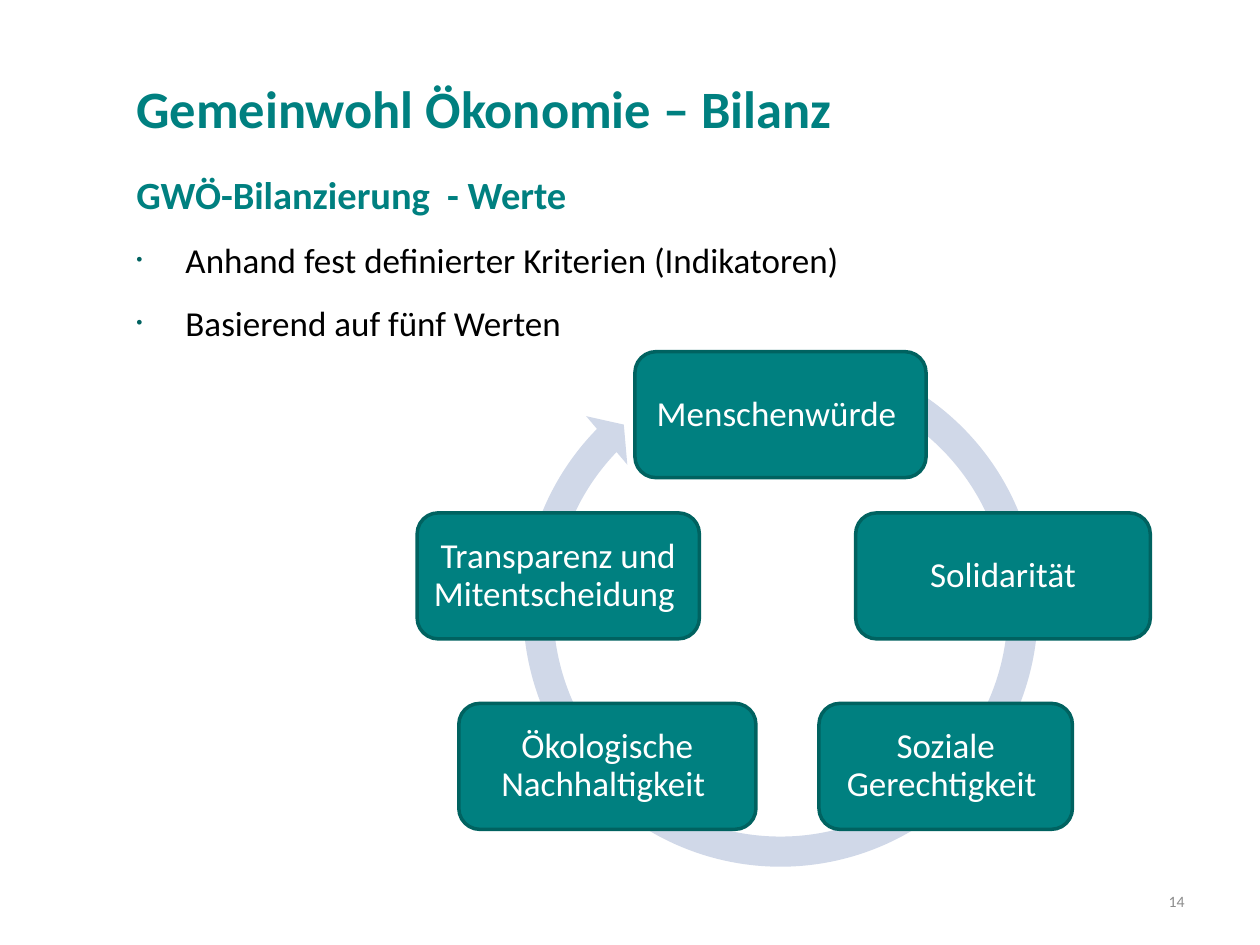
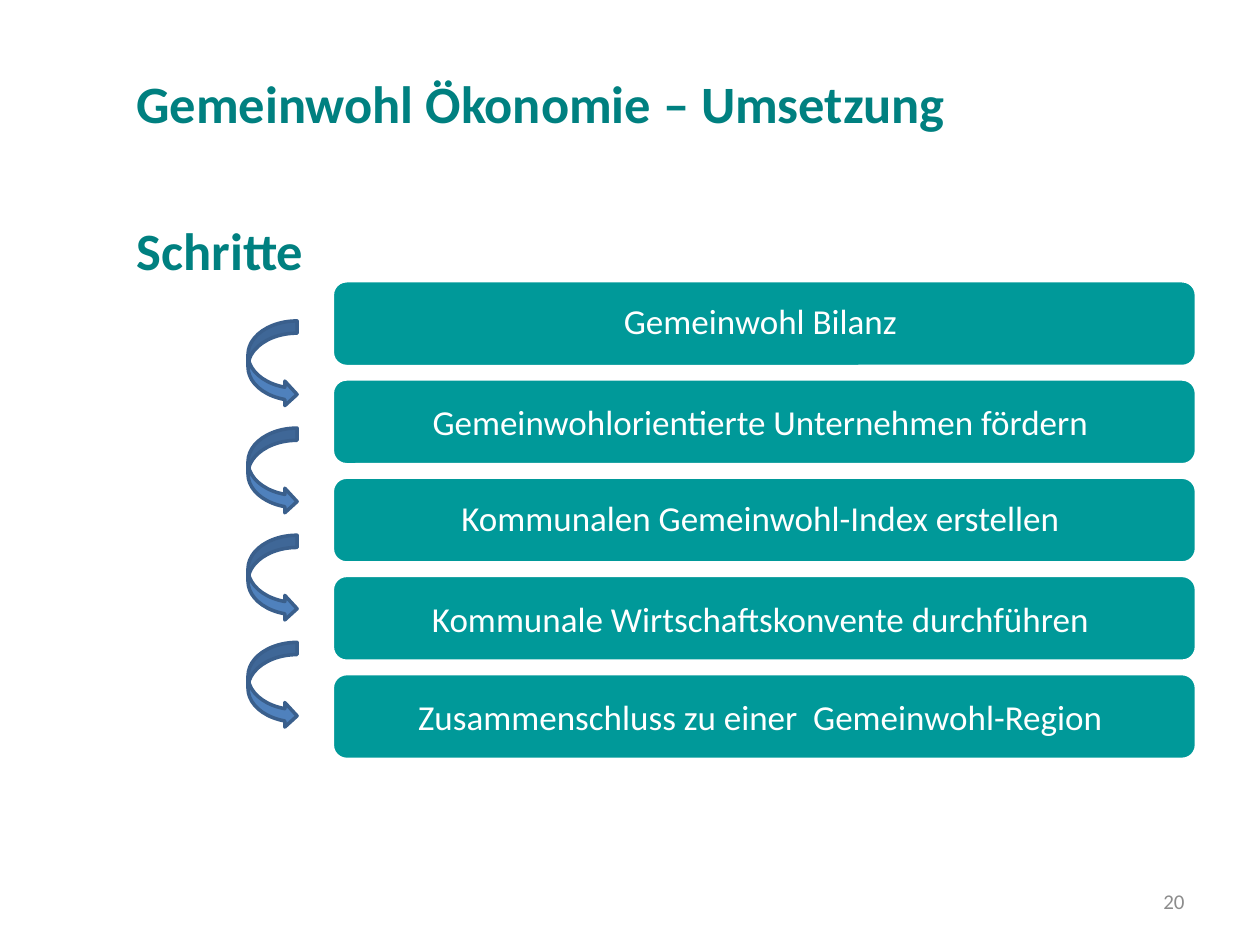
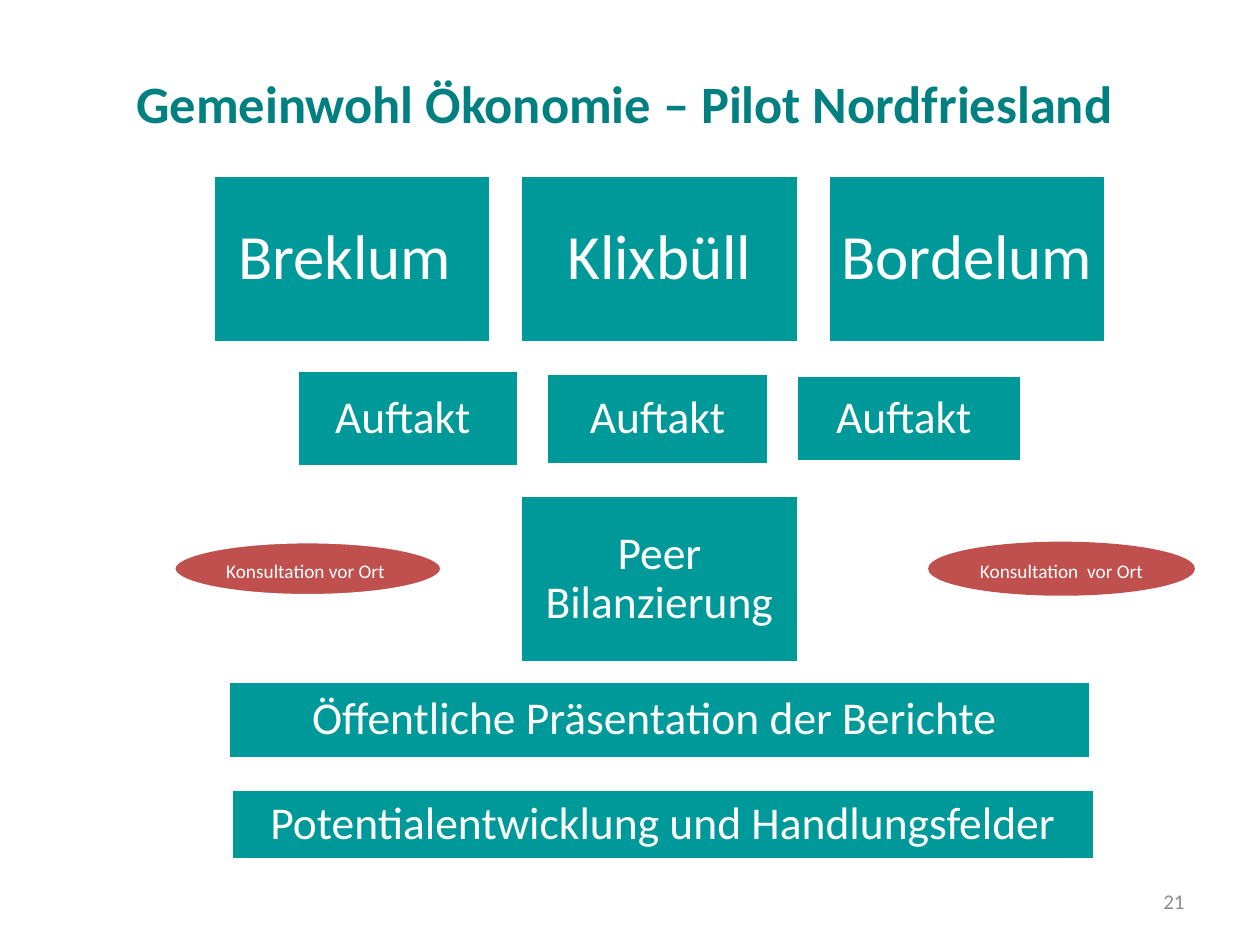
from lxml.etree import SubElement
from pptx import Presentation
from pptx.dml.color import RGBColor
from pptx.enum.shapes import MSO_SHAPE as Preset
from pptx.enum.text import MSO_ANCHOR as Anchor, PP_ALIGN as Align
from pptx.oxml.ns import qn
from pptx.util import Cm, Pt

FONT = "Calibri"
COLORS = {
    "heading": "008080",
    "edge": "006260",
    "box": "009999",
    "ring": "D0D8E8",
    "arrow": "4F81BD",
    "arrow_edge": "3A5F8C",
    "site": "C0504D",
    "white": "FFFFFF",
    "black": "000000",
    "number": "8C8C8C",
}


def rgb(name):
    return RGBColor.from_string(COLORS[name])


def style_run(run, size, color, bold=False):
    run.font.name = FONT
    run.font.size = Pt(size)
    run.font.bold = bold
    run.font.color.rgb = rgb(color)


def add_text(slide, box, text, size, color, bold=False, align=Align.LEFT, anchor=Anchor.MIDDLE):
    frame = slide.shapes.add_textbox(*map(Cm, box)).text_frame
    frame.word_wrap = True
    frame.vertical_anchor = anchor
    frame.text = text
    heading = frame.paragraphs[0]
    heading.alignment = align
    style_run(heading.runs[0], size, color, bold)
    return frame


def add_figure(slide, preset, box, fill, edge=None):
    figure = slide.shapes.add_shape(preset, *map(Cm, box))
    figure.shadow.inherit = False
    figure.fill.solid()
    figure.fill.fore_color.rgb = rgb(fill)
    if edge:
        figure.line.color.rgb = rgb(edge)
        figure.line.width = Pt(2)
    else:
        figure.line.fill.background()
    return figure


def add_label(figure, text, size, inset, spacing=0.9):
    frame = figure.text_frame
    frame.word_wrap = True
    frame.vertical_anchor = Anchor.MIDDLE
    frame.margin_left = frame.margin_right = Cm(inset)
    frame.margin_top = frame.margin_bottom = Cm(inset)
    frame.text = text
    label = frame.paragraphs[0]
    label.alignment = Align.CENTER
    label.line_spacing = spacing
    style_run(label.runs[0], size, "white")


def add_page(deck, topic, number, title_top=0.48, number_size=12):
    slide = deck.slides.add_slide(deck.slide_layouts[6])
    title = f"Gemeinwohl Ökonomie – {topic}"
    add_text(slide, (2.5, title_top, 23.22, 3.18), title, 30, "heading", True)
    add_text(slide, (18.21, 17.65, 5.92, 1.02), number, number_size, "number", align=Align.RIGHT)
    return slide


def add_bullet(paragraph):
    props = paragraph._p.get_or_add_pPr()
    props.set("marL", str(Cm(0.99)))
    props.set("indent", str(Cm(-0.99)))
    tint = SubElement(props, qn("a:buClr"))
    SubElement(tint, qn("a:srgbClr")).set("val", COLORS["edge"])
    SubElement(props, qn("a:buSzPct")).set("val", "50000")
    SubElement(props, qn("a:buFont")).set("typeface", "Arial")
    SubElement(props, qn("a:buChar")).set("char", "•")


def criteria(slide, box, heading, points):
    frame = add_text(slide, box, heading, 22, "heading", True, anchor=Anchor.TOP)
    for point in points:
        paragraph = frame.add_paragraph()
        paragraph.text = point
        add_bullet(paragraph)
        paragraph.space_before = Pt(12)
        style_run(paragraph.runs[0], 20, "black")


def value_ring(slide, left, top, values):
    ring = add_figure(slide, Preset.CIRCULAR_ARROW, (left + 1.8, top, 11.05, 11.05), "ring")
    thickness, head_angle, end_angle, start_angle, head_width = 5.5, 5.51, 224.19, 293.11, 5.8
    ring.adjustments[0] = thickness / 100
    for index, degrees in enumerate((head_angle, end_angle, start_angle), 1):
        ring.adjustments[index] = degrees * 0.6
    ring.adjustments[4] = head_width / 100
    for name, x, y, width in values:
        node = add_figure(slide, Preset.ROUNDED_RECTANGLE,
                          (left + x, top + y, width, 2.54), "heading", "edge")
        add_label(node, name, 20, 0.2)


def step_list(slide, left, top, steps):
    for row, (step, spacing) in enumerate(steps):
        bar = add_figure(slide, Preset.ROUNDED_RECTANGLE,
                         (left + 1.7, top + row * 1.98, 17.42, 1.73), "box", "white")
        add_label(bar, step, 20, 0.2, spacing)
    for row in range(len(steps) - 1):
        add_figure(slide, Preset.CURVED_RIGHT_ARROW,
                   (left, top + 0.81 + row * 2.16, 0.99, 1.73), "arrow", "arrow_edge")


def pilot_plan(slide, left, top):
    def block(text, x, y, width, height, size=26, inset=0.28):
        figure = add_figure(slide, Preset.RECTANGLE,
                            (left + x, top + y, width, height), "box", "white")
        add_label(figure, text, size, inset)

    def consultation(text, x, width, edge):
        oval = add_figure(slide, Preset.OVAL, (left + x, top + 7.39, width, 1.09), "site", edge)
        add_label(oval, text, 11, 0.25, 1.15)

    for column, community in enumerate(("Breklum ", "Klixbüll", "Bordelum")):
        block(community, 0.79 + column * 6.2, 0, 5.61, 3.38, 36, 0.15)
    kickoffs = (("Auftakt ", 4.47, 1.96), ("Auftakt", 4.47, 1.85), ("Auftakt ", 4.55, 1.73))
    for column, (kickoff, width, height) in enumerate(kickoffs):
        block(kickoff, 2.49 + column * 5.03, 4.91 - height / 2, width, height)
    block("Peer Bilanzierung", 6.99, 6.45, 5.61, 3.38)
    block("Öffentliche Präsentation der Berichte ", 1.1, 10.2, 17.4, 1.57)
    block("Potentialentwicklung und Handlungsfelder", 1.17, 12.38, 17.4, 1.42)
    consultation("Konsultation vor Ort ", 0, 5.41, "white")
    consultation("Konsultation  vor Ort ", 15.21, 5.38, None)


def main():
    deck = Presentation()
    deck.slide_width, deck.slide_height = Cm(25.4), Cm(19.05)

    balance = add_page(deck, "Bilanz", "14", 0.58, 9)
    criteria(balance, (2.5, 3.33, 22.61, 3.76), "GWÖ-Bilanzierung  - Werte", (
        "Anhand fest definierter Kriterien (Indikatoren)",
        "Basierend auf fünf Werten",
    ))
    value_ring(balance, 8.41, 6.76, (
        ("Menschenwürde ", 4.39, 0.33, 5.87),
        ("Solidarität", 8.84, 3.58, 5.94),
        ("Soziale Gerechtigkeit ", 8.1, 7.42, 5.11),
        ("Ökologische Nachhaltigkeit ", 0.84, 7.42, 5.99),
        ("Transparenz und Mitentscheidung ", 0, 3.58, 5.69),
    ))

    rollout = add_page(deck, "Umsetzung", "20")
    step_list(rollout, 5, 5.66, (
        ("Gemeinwohl Bilanz ", 0.9),
        ("Gemeinwohlorientierte Unternehmen fördern ", 1.0),
        ("Kommunalen Gemeinwohl-Index erstellen ", 0.9),
        ("Kommunale Wirtschaftskonvente durchführen ", 1.0),
        ("Zusammenschluss zu einer  Gemeinwohl-Region ", 1.0),
    ))
    add_text(rollout, (2.51, 4.27, 4.19, 1.55), "Schritte", 30, "heading", True, anchor=Anchor.TOP)

    pilot = add_page(deck, "Pilot Nordfriesland", "21")
    pilot_plan(pilot, 3.5, 3.53)

    deck.save("out.pptx")


if __name__ == "__main__":
    main()
